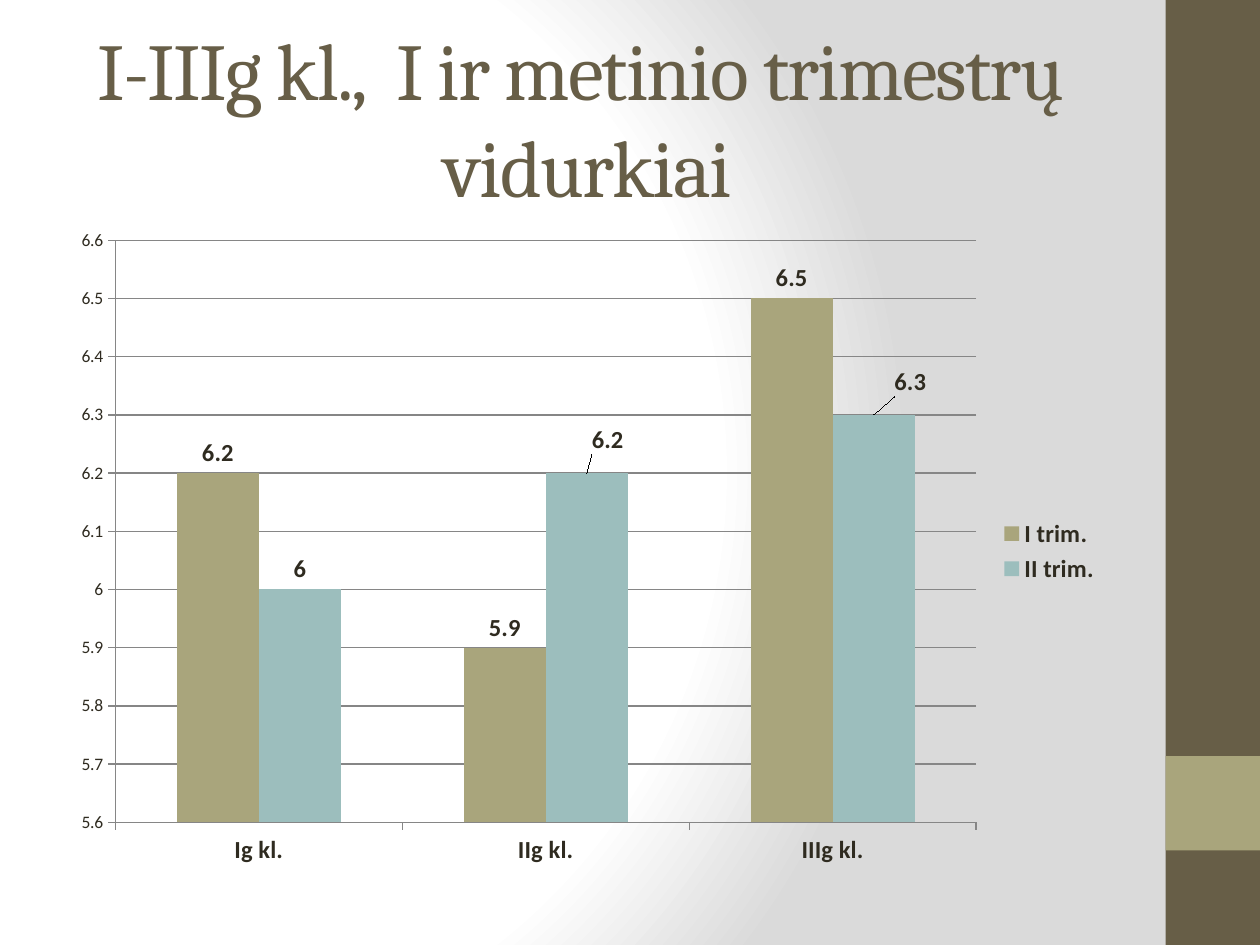
from pptx import Presentation
from pptx.chart.data import CategoryChartData
from pptx.dml.color import RGBColor
from pptx.enum.chart import XL_CHART_TYPE, XL_LABEL_POSITION, XL_LEGEND_POSITION, XL_TICK_MARK
from pptx.enum.shapes import MSO_SHAPE
from pptx.enum.text import MSO_ANCHOR, PP_ALIGN
from pptx.oxml import parse_xml
from pptx.oxml.ns import nsdecls
from pptx.util import Inches, Pt

COLUMN = XL_CHART_TYPE.COLUMN_CLUSTERED
OUTSIDE_END = XL_LABEL_POSITION.OUTSIDE_END
RIGHT = XL_LEGEND_POSITION.RIGHT
TICK_OUT = XL_TICK_MARK.OUTSIDE
RECTANGLE = MSO_SHAPE.RECTANGLE
MIDDLE = MSO_ANCHOR.MIDDLE
CENTER = PP_ALIGN.CENTER

BROWN = RGBColor(0x67, 0x5E, 0x47)
OLIVE = RGBColor(0xA9, 0xA5, 0x7C)
TEAL = RGBColor(0x9C, 0xBE, 0xBD)
INK = RGBColor(0x2F, 0x2B, 0x20)
GRID_GRAY = RGBColor(0x86, 0x86, 0x86)

BAND = 0.75  # width of the side band and side of its square
LEFT, WIDTH = 0.5, 8.33  # column shared by title and chart


def add_text(page, text, left, top, width, height, font, size, color, spacing):
    box = page.shapes.add_textbox(Inches(left), Inches(top), Inches(width), Inches(height))
    frame = box.text_frame
    frame.word_wrap = True
    frame.vertical_anchor = MIDDLE
    para = frame.paragraphs[0]
    para.alignment = CENTER
    span = para.add_run()
    span.text = text
    span.font.name = font
    span.font.size = Pt(size)
    span.font.color.rgb = color
    span.font._element.set("spc", str(spacing * 100))


def manual_layout(**places):
    items = "".join(f'<c:{name} val="{value}"/>' for name, value in places.items())
    return parse_xml(f'<c:layout {nsdecls("c")}><c:manualLayout>{items}</c:manualLayout></c:layout>')


deck = Presentation()
deck.slide_width, deck.slide_height = Inches(10), Inches(7.5)
page = deck.slides.add_slide(deck.slide_layouts[6])

# Background: white glow fading to gray on the right
page.background.fill.gradient()
gradient = page.element.xpath(".//p:bgPr/a:gradFill")[0]
stops = "".join(
    f'<a:gs pos="{share * 1000}"><a:srgbClr val="{color}"/></a:gs>'
    for share, color in [(0, "FFFFFF"), (75, "FFFFFF"), (100, "DADADA")]
)
gradient.getparent().replace(gradient, parse_xml(
    f'<a:gradFill {nsdecls("a")} rotWithShape="1"><a:gsLst>{stops}</a:gsLst><a:path path="circle">'
    '<a:fillToRect l="20000" t="50000" r="100000" b="50000"/></a:path></a:gradFill>'
))

# Side band with its square
for top, height, color in [(0, 10 * BAND, BROWN), (8 * BAND, BAND, OLIVE)]:
    block = page.shapes.add_shape(
        RECTANGLE, Inches(10 - BAND), Inches(top), Inches(BAND), Inches(height))
    block.shadow.inherit = False
    block.fill.solid()
    block.fill.fore_color.rgb = color
    block.line.fill.background()

# Title
add_text(page, "I-IIIg kl.,  I ir metinio trimestrų  vidurkiai", LEFT, 0.3, WIDTH, 1.25,
         font="Cambria", size=46, color=BROWN, spacing=-1)

# Chart of class averages
averages = CategoryChartData()
averages.categories = ["Ig kl.", "IIg kl.", "IIIg kl."]
averages.add_series("I trim.", [6.2, 5.9, 6.5])
averages.add_series("II trim.", [6, 6.2, 6.3])
chart = page.shapes.add_chart(
    COLUMN, Inches(LEFT), Inches(1.75), Inches(WIDTH), Inches(5.25), averages).chart
chart.has_title = False
chart.font.name = "Calibri"
chart.font.size = Pt(10)
chart.font.color.rgb = INK

plot_area = chart.element.xpath(".//c:plotArea")[0]
for layout in plot_area.xpath("c:layout"):
    plot_area.remove(layout)
plot_area.insert(0, manual_layout(
    layoutTarget="inner", xMode="edge", yMode="edge", x=0.05, y=0.03, w=0.82, h=0.88))

# Axes, gridlines and legend
value_axis, category_axis = chart.value_axis, chart.category_axis
value_axis.minimum_scale, value_axis.maximum_scale = 5.6, 6.6
value_axis.major_unit = 0.1
value_axis.has_major_gridlines = True
for axis in (value_axis, category_axis):
    axis.major_tick_mark = TICK_OUT
for lines in (value_axis, category_axis, value_axis.major_gridlines):
    lines.format.line.color.rgb = GRID_GRAY
    lines.format.line.width = Pt(0.75)

chart.has_legend = True
legend = chart.legend
legend.position = RIGHT
legend.include_in_layout = False

# Columns and their labels
plot = chart.plots[0]
plot.gap_width = 150
plot.overlap = 0
plot.vary_by_categories = False
bold_fonts = [category_axis.tick_labels.font, legend.font]
for series, color in zip(plot.series, (OLIVE, TEAL)):
    series.format.fill.solid()
    series.format.fill.fore_color.rgb = color
    series.invert_if_negative = False
    labels = series.data_labels
    labels.show_value = True
    labels.position = OUTSIDE_END
    bold_fonts.append(labels.font)

# Two labels of the second term sit up and to the right
for index, shift in [(1, 0.02), (2, 0.035)]:
    label = plot.series[1].points[index].data_label
    label.position = OUTSIDE_END
    bold_fonts.append(label.font)
    mark = chart.element.xpath(f".//c:dLbl/c:idx[@val='{index}']")[0]
    mark.addnext(manual_layout(x=shift, y=-0.02))

for font in bold_fonts:
    font.name = "Calibri"
    font.size = Pt(14)
    font.bold = True
    font.color.rgb = INK

deck.save("out.pptx")
